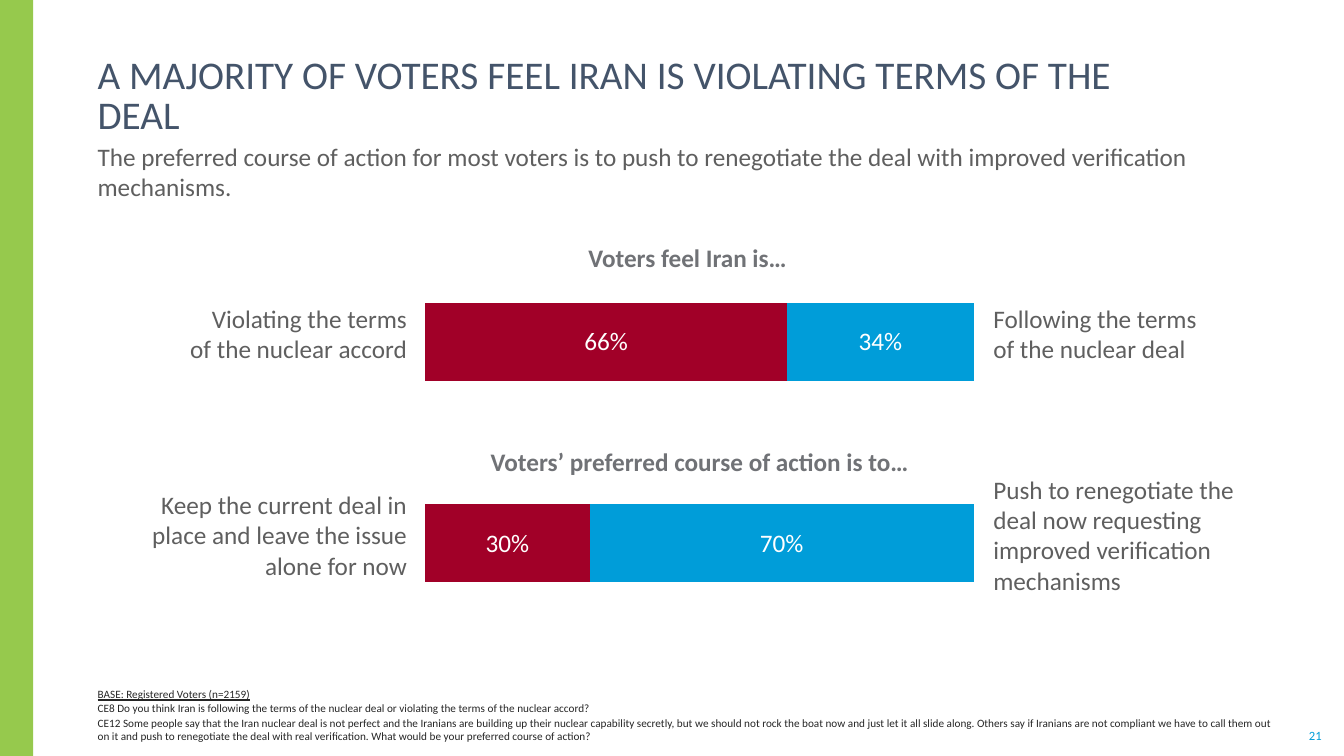
from lxml import etree
from pptx import Presentation
from pptx.chart.data import CategoryChartData
from pptx.dml.color import RGBColor
from pptx.enum.chart import XL_CHART_TYPE, XL_LABEL_POSITION
from pptx.enum.shapes import MSO_SHAPE
from pptx.enum.text import MSO_ANCHOR, PP_ALIGN
from pptx.oxml import parse_xml
from pptx.oxml.ns import nsdecls
from pptx.util import Inches, Pt

LEFT, CENTER, RIGHT = PP_ALIGN.LEFT, PP_ALIGN.CENTER, PP_ALIGN.RIGHT
TOP, MIDDLE, BOTTOM = MSO_ANCHOR.TOP, MSO_ANCHOR.MIDDLE, MSO_ANCHOR.BOTTOM
FONT = "Calibri"
GREEN = RGBColor(0x96, 0xC9, 0x4D)
BLUE = RGBColor(0x00, 0x9D, 0xD9)
RED = RGBColor(0xA1, 0x00, 0x28)
SLATE = RGBColor(0x44, 0x54, 0x6A)
GRAY = RGBColor(0x5F, 0x5F, 0x5F)
HEADING_GRAY = RGBColor(0x70, 0x72, 0x76)
DARK = RGBColor(0x26, 0x26, 0x26)
WHITE = RGBColor(0xFF, 0xFF, 0xFF)

presentation = Presentation()
presentation.slide_width = Inches(13.33)
presentation.slide_height = Inches(7.5)
slide = presentation.slides.add_slide(presentation.slide_layouts[6])


def write_text(shape, lines, size, color, align=LEFT, anchor=TOP, inset=0.05, bold=False):
    """Fill a shape with one paragraph per line and return the paragraphs."""
    frame = shape.text_frame
    frame.word_wrap = True
    frame.vertical_anchor = anchor
    frame.margin_top = frame.margin_bottom = Inches(inset)
    for index, line in enumerate(lines):
        paragraph = frame.add_paragraph() if index else frame.paragraphs[0]
        paragraph.alignment = align
        run = paragraph.add_run()
        run.text = line
        run.font.name = FONT
        run.font.size = Pt(size)
        run.font.bold = bold
        run.font.color.rgb = color
    return frame.paragraphs


def add_text(left, top, width, height, *args, **options):
    """Add a text box and return its paragraphs."""
    box = slide.shapes.add_textbox(Inches(left), Inches(top), Inches(width), Inches(height))
    return write_text(box, *args, **options)


# Green side band
band = slide.shapes.add_shape(MSO_SHAPE.RECTANGLE, 0, 0, Inches(0.33), Inches(7.5))
band.shadow.inherit = False
band.fill.solid()
band.fill.fore_color.rgb = GREEN
band.line.fill.background()

# Title and subtitle
title = add_text(0.87, 0.74, 11.13, 0.62,
                 ["A MAJORITY OF VOTERS FEEL IRAN IS VIOLATING TERMS OF THE DEAL"],
                 28, SLATE, anchor=BOTTOM, inset=0)
title[0].line_spacing = 0.85
add_text(0.87, 1.4, 11.63, 0.36,
         ["The preferred course of action for most voters is to push to renegotiate "
          "the deal with improved verification mechanisms."], 18, GRAY, inset=0)

# Questions: heading, heading left and top, bar chart top, shares, side labels (text, left, width)
questions = [
    ("Voters feel Iran is…", 4.2, 2.35, 2.25, (0.66, 0.34),
     ("Violating the terms of the nuclear accord", 1.72, 2.47),
     ("Following the terms of the nuclear deal", 9.7, 2.47)),
    ("Voters’ preferred course of action is to…", 4.32, 4.38, 4.25, (0.3, 0.7),
     ("Keep the current deal in place and leave the issue alone for now", 1.08, 3.11),
     ("Push to renegotiate the deal now requesting improved verification mechanisms",
      9.7, 2.8)),
]
plot_layout = {"x": 0.022, "y": 0.291, "w": 0.955, "h": 0.665}

for heading, heading_left, heading_top, chart_top, shares, left_label, right_label in questions:
    # Stacked bar
    chart_data = CategoryChartData(number_format="0%")
    chart_data.categories = ["1"]
    for number, share in enumerate(shares, 1):
        chart_data.add_series(f"Series {number}", [share])
    chart = slide.shapes.add_chart(XL_CHART_TYPE.BAR_STACKED_100, Inches(4.09),
                                   Inches(chart_top), Inches(5.7), Inches(1.83),
                                   chart_data).chart
    chart.has_legend = False
    chart.has_title = False
    chart.font.name = FONT
    chart.font.size = Pt(18)
    chart.font.color.rgb = WHITE
    chart.value_axis.minimum_scale = 0
    chart.value_axis.maximum_scale = 1
    chart.value_axis.has_major_gridlines = False
    chart.value_axis.visible = False
    chart.category_axis.visible = False

    plot = chart.plots[0]
    plot.gap_width = 57
    plot.overlap = 100
    plot.vary_by_categories = False
    for series, color in zip(plot.series, (RED, BLUE)):
        series.format.fill.solid()
        series.format.fill.fore_color.rgb = color
        labels = series.data_labels
        labels.show_value = True
        labels.position = XL_LABEL_POSITION.CENTER
        labels.number_format = "0%"
        labels.number_format_is_linked = False
        labels.font.name = FONT
        labels.font.size = Pt(18)
        labels.font.color.rgb = WHITE

    # Fixed inner plot area
    plot_area = chart._chartSpace.chart.plotArea
    for old_layout in plot_area.findall("{*}layout"):
        plot_area.remove(old_layout)
    layout = parse_xml(f'<c:layout {nsdecls("c")}><c:manualLayout/></c:layout>')
    settings = {"layoutTarget": "inner", "xMode": "edge", "yMode": "edge", **plot_layout}
    for name, value in settings.items():
        etree.SubElement(layout[0], layout.tag.replace("layout", name), val=str(value))
    plot_area.insert(0, layout)

    # Labels on both sides of the bar
    for (text, left, width), align in ((left_label, RIGHT), (right_label, LEFT)):
        label = slide.shapes.add_shape(MSO_SHAPE.ROUNDED_RECTANGLE, Inches(left),
                                       Inches(chart_top + 0.5), Inches(width), Inches(1.11))
        label.shadow.inherit = False
        label.fill.background()
        label.line.fill.background()
        write_text(label, [text], 18, GRAY, align=align, anchor=MIDDLE)

    add_text(heading_left, heading_top, 5.24, 0.4, [heading], 18, HEADING_GRAY,
             align=CENTER, bold=True)

# Base and question wording
footnotes = add_text(0.87, 6.97, 11.91, 0.4, [
    "BASE: Registered Voters (n=2159)",
    "CE8 Do you think Iran is following the terms of the nuclear deal or violating "
    "the terms of the nuclear accord?",
    "CE12 Some people say that the Iran nuclear deal is not perfect and the Iranians are "
    "building up their nuclear capability secretly, but we should not rock the boat now and "
    "just let it all slide along. Others say if Iranians are not compliant we have to call "
    "them out on it and push to renegotiate the deal with real verification. What would be "
    "your preferred course of action?",
], 8, DARK, anchor=BOTTOM, inset=0)
footnotes[0].runs[0].font.underline = True
for paragraph in footnotes[1:]:
    paragraph.space_before = Pt(0.6)

# Page number
page_number = slide.shapes.add_textbox(Inches(12.97), Inches(7.22), Inches(0.15), Inches(0.15))
write_text(page_number, ["21"], 9, BLUE, align=CENTER, anchor=MIDDLE, inset=0)
page_number.text_frame.margin_left = page_number.text_frame.margin_right = 0
page_number.text_frame.word_wrap = False

presentation.save("out.pptx")
